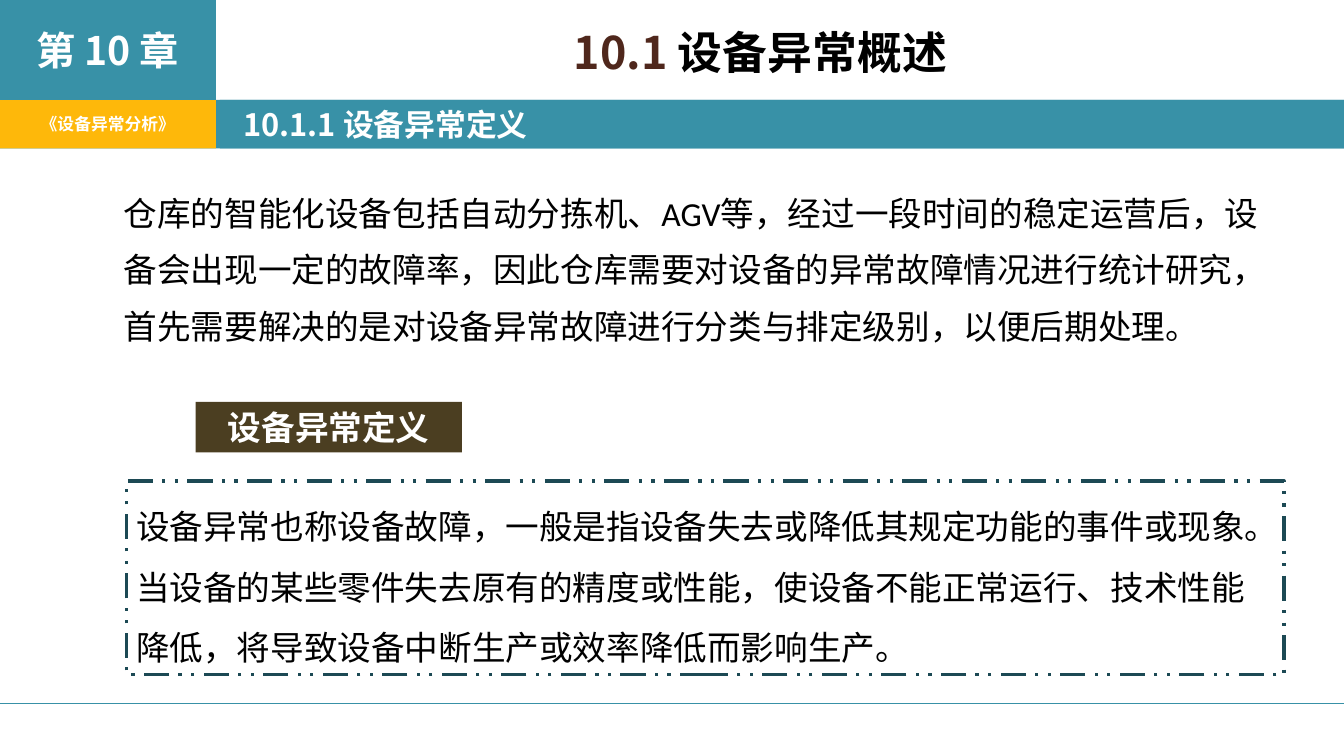
from dataclasses import dataclass
from typing import Any, Optional

from lxml.etree import SubElement
from pptx import Presentation
from pptx.dml.color import RGBColor
from pptx.enum.dml import MSO_LINE_DASH_STYLE as Dash
from pptx.enum.shapes import MSO_CONNECTOR_TYPE as Link, MSO_SHAPE as Preset
from pptx.enum.text import MSO_ANCHOR as Anchor, MSO_AUTO_SIZE as Fit, PP_ALIGN as Align
from pptx.oxml.ns import qn
from pptx.util import Cm, Pt

TEAL, AMBER, BROWN, DARK_TEAL = "3891A7", "FEB80A", "4B3E21", "1C4954"
WHITE, BLACK, MAROON = "FFFFFF", "000000", "4F271C"
HEADING_FONT, BODY_FONT = "Noto Sans CJK SC", "Calibri"
PAGE_WIDTH, PAGE_HEIGHT = 33.87, 19.05
SIDE_WIDTH, BAND_TOP, BAND_HEIGHT = 5.44, 2.52, 1.22
INSET = 0.25


@dataclass
class Span:
    text: str
    size: float
    color: str
    font: str = HEADING_FONT
    bold: bool = True


@dataclass
class Block:
    """A rectangle or placeholder; lengths are in centimetres."""
    left: float
    top: float
    width: float
    height: float
    spans: tuple[Span, ...] = ()
    fill: Optional[str] = None
    outline: Optional[str] = None
    align: Align = Align.CENTER
    anchor: Anchor = Anchor.MIDDLE
    spacing: float = 1.0
    inset: float = INSET


def rgb(value: str) -> RGBColor:
    return RGBColor.from_string(value)


def apply(target: Any, values: dict[str, Any]) -> None:
    for name, value in values.items():
        setattr(target, name, value)


def place(shape: Any, block: Block) -> None:
    apply(shape, {"left": Cm(block.left), "top": Cm(block.top),
                  "width": Cm(block.width), "height": Cm(block.height)})


def write(shape: Any, block: Block) -> None:
    frame = shape.text_frame
    apply(frame, {"word_wrap": True, "auto_size": Fit.NONE,
                  "vertical_anchor": block.anchor,
                  "margin_left": Cm(block.inset), "margin_right": Cm(INSET),
                  "margin_top": Cm(0.13), "margin_bottom": Cm(0.13)})
    para = frame.paragraphs[0]
    apply(para, {"alignment": block.align, "line_spacing": block.spacing,
                 "space_before": Pt(0)})
    for span in block.spans:
        run = para.add_run()
        run.text = span.text
        apply(run.font, {"size": Pt(span.size), "bold": span.bold, "name": span.font})
        run.font.color.rgb = rgb(span.color)
        SubElement(run.font._element, qn("a:ea"), typeface=span.font)


def fill_placeholder(shape: Any, block: Block) -> None:
    place(shape, block)
    write(shape, block)


def remove_bullet(para: Any) -> None:
    properties = para._p.get_or_add_pPr()
    properties.set("marL", "0")
    properties.set("indent", "0")
    SubElement(properties, qn("a:buNone"))


def draw_panel(page: Any, block: Block) -> None:
    box = page.shapes.add_shape(Preset.RECTANGLE, 0, 0, 0, 0)
    place(box, block)
    box.shadow.inherit = False
    if block.fill:
        box.fill.solid()
        box.fill.fore_color.rgb = rgb(block.fill)
    else:
        box.fill.background()
    if block.outline:
        box.line.color.rgb = rgb(block.outline)
        apply(box.line, {"width": Pt(2.25), "dash_style": Dash.DASH_DOT_DOT})
    else:
        box.line.fill.background()
    if block.spans:
        write(box, block)


def draw_footer_rule(page: Any, height: float) -> None:
    rule = page.shapes.add_connector(Link.STRAIGHT, 0, Cm(height), Cm(PAGE_WIDTH), Cm(height))
    rule.line.color.rgb = rgb(TEAL)
    rule.line.width = Pt(0.79)
    SubElement(rule._element.spPr, qn("a:effectLst"))


TITLE = Block(5.87, 0.48, 26.59, 2.03,
              (Span("10.1 ", 32, MAROON), Span("设备异常概述", 32, BLACK)),
              anchor=Anchor.TOP)
INTRODUCTION = Block(
    2.87, 4.32, 29.59, 4.57,
    (Span("仓库的智能化设备包括自动分拣机、AGV等，经过一段时间的稳定运营后，"
          "设备会出现一定的故障率，因此仓库需要对设备的异常故障情况进行统计研究，"
          "首先需要解决的是对设备异常故障进行分类与排定级别，以便后期处理。",
          24, BLACK, BODY_FONT, False),),
    align=Align.LEFT, anchor=Anchor.TOP, spacing=1.4)
PANELS = (
    Block(0, BAND_TOP, PAGE_WIDTH, BAND_HEIGHT, fill=TEAL),
    Block(0, BAND_TOP, SIDE_WIDTH, BAND_HEIGHT,
          (Span("《设备异常分析》", 12, WHITE),), fill=AMBER),
    Block(0, 0, SIDE_WIDTH, BAND_TOP, (Span("第 10 章", 28, WHITE),), fill=TEAL),
    Block(5.54, BAND_TOP, PAGE_WIDTH - 5.54, BAND_HEIGHT,
          (Span("10.1.1 设备异常定义", 22, WHITE),), fill=TEAL,
          align=Align.JUSTIFY, inset=0.6),
    Block(3.18, 12.12, 29.18, 4.88,
          (Span("设备异常也称设备故障，一般是指设备失去或降低其规定功能的事件或现象。"
                "当设备的某些零件失去原有的精度或性能，使设备不能正常运行、技术性能降低，"
                "将导致设备中断生产或效率降低而影响生产。",
                24, BLACK, BODY_FONT, False),),
          outline=DARK_TEAL, align=Align.LEFT, anchor=Anchor.TOP, spacing=1.5),
    Block(4.93, 10.13, 6.71, 1.27, (Span("设备异常定义", 24, WHITE, BODY_FONT),),
          fill=BROWN, anchor=Anchor.TOP),
)


def main() -> None:
    deck = Presentation()
    apply(deck, {"slide_width": Cm(PAGE_WIDTH), "slide_height": Cm(PAGE_HEIGHT)})
    page = deck.slides.add_slide(deck.slide_layouts[1])
    fill_placeholder(page.shapes.title, TITLE)
    body = page.placeholders[1]
    remove_bullet(body.text_frame.paragraphs[0])
    fill_placeholder(body, INTRODUCTION)
    for panel in PANELS:
        draw_panel(page, panel)
    draw_footer_rule(page, 17.73)
    deck.save("out.pptx")


if __name__ == "__main__":
    main()
